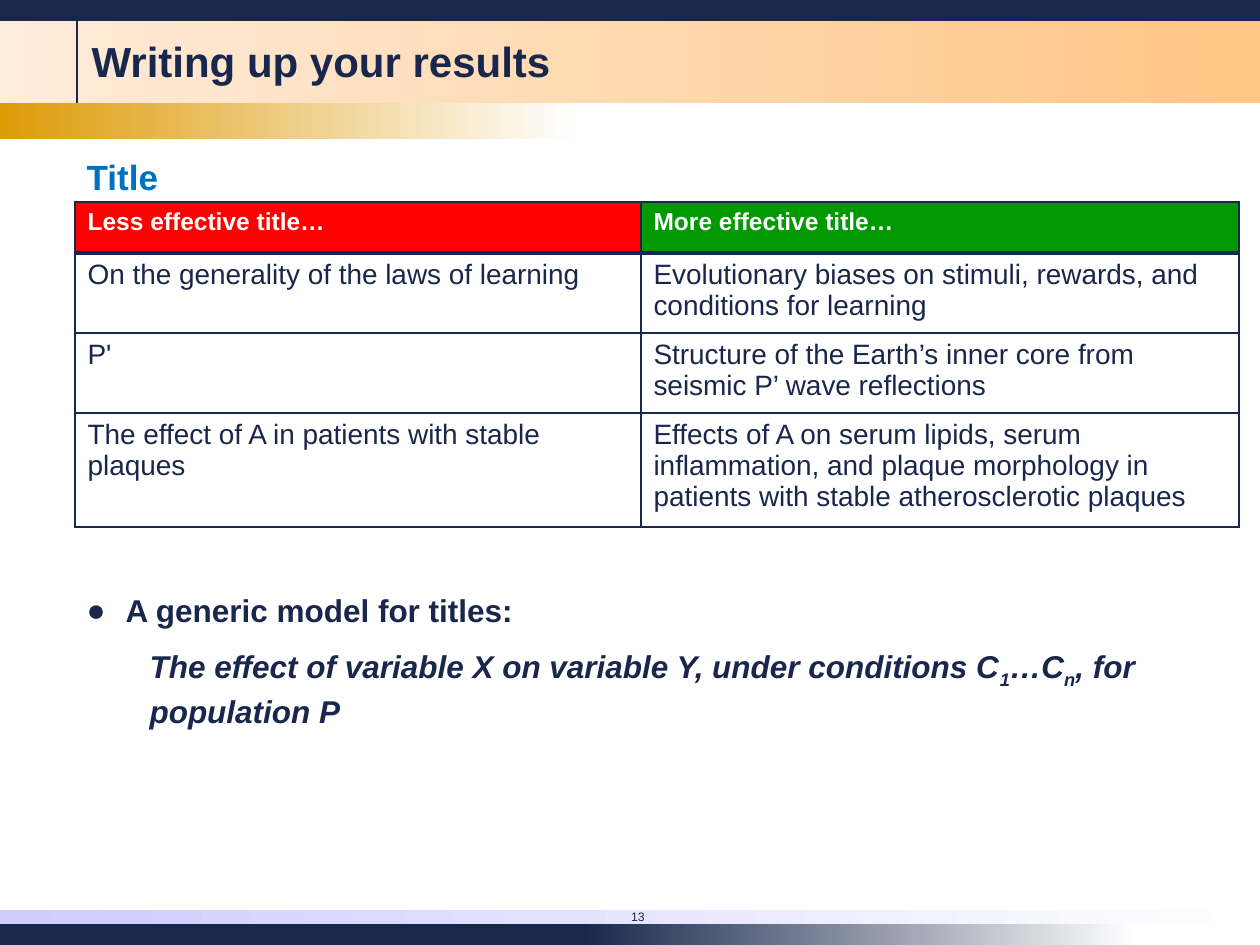
"""Builds the slide on writing effective titles, with a comparison table."""
from lxml.etree import SubElement
from pptx import Presentation
from pptx.dml.color import RGBColor
from pptx.enum.shapes import MSO_CONNECTOR, MSO_SHAPE
from pptx.enum.text import MSO_ANCHOR, MSO_AUTO_SIZE, PP_ALIGN
from pptx.oxml.ns import qn
from pptx.util import Pt

COLORS = {
    "navy": "18274B", "white": "FFFFFF", "blue": "0070C0", "red": "FF0000",
    "green": "009900", "cream": "FFECDB", "peach": "FFC583",
    "gold": "DD9B08", "lilac": "CCCCFF",
}
BANDS = [
    ((0, 0, 1260, 103), ("cream", "peach")),
    ((0, 0, 1260, 21), ("navy",)),
    ((0, 103, 577, 36), ("gold", "white")),
    ((0, 924, 1095, 21), ("navy",)),
    ((0, 910, 1260, 14), ("lilac", "white")),
    ((581, 924, 556, 21), ("navy", "white")),
]
RULE = (77, 21, 77, 103)
TITLE = "Writing up your results"
NUMBER = "13"
BODY = [
    {"runs": [("Title", 0)], "level": 0, "margin": 0, "indent": 0, "bullet": None,
     "before": 0, "font": {"size": 20, "color": "blue", "bold": True}},
    {"runs": [("A generic model for titles:", 0)], "level": 0, "margin": 39,
     "indent": -39, "bullet": "●", "before": 215,
     "font": {"size": 18, "color": "navy", "bold": True}},
    {"runs": [("The effect of variable X on variable Y, under conditions C", 0),
              ("1", -25), ("…C", 0), ("n", -25), (", for population P", 0)],
     "level": 1, "margin": 63, "indent": 0, "bullet": None, "before": 0,
     "font": {"size": 18, "color": "navy", "bold": True, "italic": True}},
]
ROWS = [
    ("Less effective title…", "More effective title…"),
    ("On the generality of the laws of learning",
     "Evolutionary biases on stimuli, rewards, and conditions for learning"),
    ("P'", "Structure of the Earth’s inner core from seismic P’ wave reflections"),
    ("The effect of A in patients with stable plaques",
     "Effects of A on serum lipids, serum inflammation, and plaque morphology "
     "in patients with stable atherosclerotic plaques"),
]
HEAD_FILLS = ("red", "green")
COL_WIDTHS = (566, 598)
ROW_HEIGHTS = (51, 80, 80, 114)


def px(n):
    return round(n * 914400 / 126)


def rgb(name):
    return RGBColor.from_string(COLORS[name])


def style(font, size, color, **values):
    font.color.rgb = rgb(color)
    for key, value in {"name": "Arial", "size": Pt(size), **values}.items():
        setattr(font, key, value)


def place(sp, box):
    for key, n in zip(("left", "top", "width", "height"), box):
        setattr(sp, key, px(n))


def add_band(s, box, colors):
    sp = s.shapes.add_shape(MSO_SHAPE.RECTANGLE, *map(px, box))
    sp.shadow.inherit = False
    sp.line.fill.background()
    if len(colors) == 1:
        sp.fill.solid()
        sp.fill.fore_color.rgb = rgb(colors[0])
        return
    sp.fill.gradient()
    sp.fill.gradient_angle = 0
    for stop, color in zip(sp.fill.gradient_stops, colors):
        stop.color.rgb = rgb(color)


def add_rule(s):
    line = s.shapes.add_connector(MSO_CONNECTOR.STRAIGHT, *map(px, RULE))
    line.line.color.rgb = rgb("navy")
    line.line.width = Pt(0.75)
    SubElement(line.element.spPr, qn("a:effectLst"))


def bring_forward(sp):
    sp.element.getparent().append(sp.element)


def fill_title(sp):
    bring_forward(sp)
    place(sp, (79, 29, 489, 63))
    tf = sp.text_frame
    tf.text = TITLE
    tf.word_wrap = False
    tf.auto_size = MSO_AUTO_SIZE.NONE
    tf.vertical_anchor = MSO_ANCHOR.MIDDLE
    p = tf.paragraphs[0]
    p.alignment = PP_ALIGN.LEFT
    style(p.runs[0].font, 24, "navy", bold=True)


def fill_body(sp):
    bring_forward(sp)
    place(sp, (74, 147, 1181, 580))
    tf = sp.text_frame
    tf.word_wrap = True
    tf.auto_size = MSO_AUTO_SIZE.NONE
    tf.vertical_anchor = MSO_ANCHOR.TOP
    for i, item in enumerate(BODY):
        p = tf.add_paragraph() if i else tf.paragraphs[0]
        p.level = item["level"]
        p.line_spacing = 1.05
        p.space_before = Pt(item["before"])
        p.space_after = Pt(9)
        pPr = p._p.get_or_add_pPr()
        pPr.set("marL", str(px(item["margin"])))
        pPr.set("indent", str(px(item["indent"])))
        if item["bullet"]:
            SubElement(pPr, qn("a:buFont"), typeface="Arial")
            SubElement(pPr, qn("a:buChar"), char=item["bullet"])
        else:
            SubElement(pPr, qn("a:buNone"))
        for text, shift in item["runs"]:
            r = p.add_run()
            r.text = text
            style(r.font, **item["font"])
            if shift:
                r._r.get_or_add_rPr().set("baseline", str(shift * 1000))


def add_number(s):
    tf = s.shapes.add_textbox(*map(px, (604, 903, 53, 25))).text_frame
    tf.word_wrap = True
    tf.text = NUMBER
    p = tf.paragraphs[0]
    p.alignment = PP_ALIGN.RIGHT
    style(p.runs[0].font, 7, "navy")


def set_borders(cell, widths):
    tcPr = cell._tc.get_or_add_tcPr()
    for side, width in widths.items():
        ln = SubElement(tcPr, qn(f"a:ln{side}"), w=str(Pt(width)))
        fill = SubElement(ln, qn("a:solidFill"))
        SubElement(fill, qn("a:srgbClr"), val=COLORS["navy"])


def add_table(s):
    box = (75, 202, sum(COL_WIDTHS), sum(ROW_HEIGHTS))
    table = s.shapes.add_table(len(ROWS), len(COL_WIDTHS), *map(px, box)).table
    table.horz_banding = False
    for column, width in zip(table.columns, COL_WIDTHS):
        column.width = px(width)
    for i, texts in enumerate(ROWS):
        table.rows[i].height = px(ROW_HEIGHTS[i])
        head = i == 0
        for j, text in enumerate(texts):
            cell = table.cell(i, j)
            cell.text = text
            set_borders(cell, {"L": 1, "R": 1, "T": 2.25 if i == 1 else 1,
                               "B": 2.25 if head else 1})
            if head:
                cell.fill.solid()
                cell.fill.fore_color.rgb = rgb(HEAD_FILLS[j])
            else:
                cell.fill.background()
            style(cell.text_frame.paragraphs[0].runs[0].font, 14 if head else 16,
                  "white" if head else "navy", bold=head)


def main():
    prs = Presentation()
    prs.slide_width, prs.slide_height = px(1260), px(945)
    s = prs.slides.add_slide(prs.slide_layouts[1])
    for i, (box, colors) in enumerate(BANDS):
        add_band(s, box, colors)
        if i == 1:
            add_rule(s)
    add_number(s)
    fill_title(s.shapes.title)
    fill_body(s.placeholders[1])
    add_table(s)
    prs.save("out.pptx")


if __name__ == "__main__":
    main()
